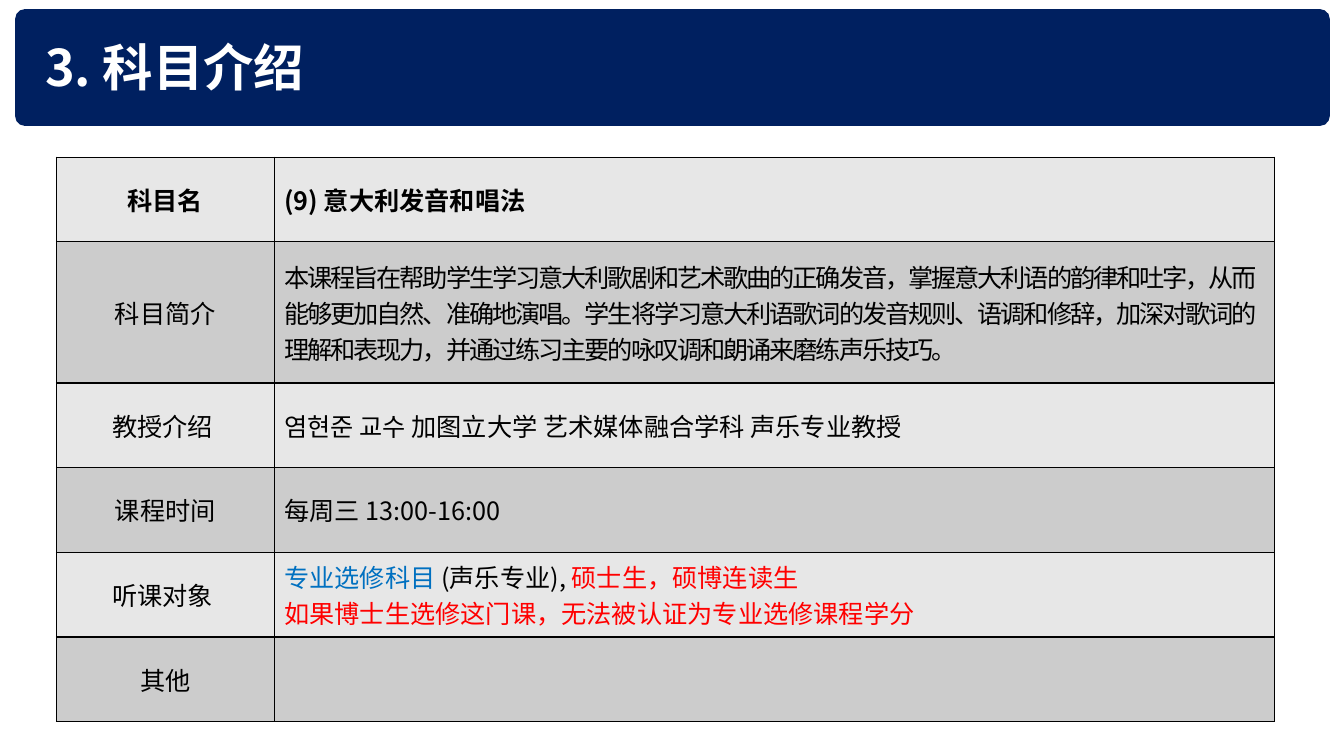
from lxml import etree
from pptx import Presentation
from pptx.dml.color import RGBColor
from pptx.enum.shapes import MSO_SHAPE
from pptx.enum.text import MSO_ANCHOR, PP_ALIGN
from pptx.oxml import parse_xml
from pptx.oxml.ns import qn
from pptx.util import Inches, Pt

ROUNDED = MSO_SHAPE.ROUNDED_RECTANGLE
MIDDLE = MSO_ANCHOR.MIDDLE
CENTER, LEFT = PP_ALIGN.CENTER, PP_ALIGN.LEFT

NAVY = RGBColor(0x00, 0x20, 0x60)
WHITE = RGBColor(0xFF, 0xFF, 0xFF)
BLACK = RGBColor(0x00, 0x00, 0x00)
BLUE = RGBColor(0x00, 0x70, 0xC0)
RED = RGBColor(0xFF, 0x00, 0x00)
BANDS = [RGBColor(0xE7, 0xE7, 0xE7), RGBColor(0xCC, 0xCC, 0xCC)]

FONT = "Noto Sans CJK KR"
BORDER = (
    '<a:{side} xmlns:a="http://schemas.openxmlformats.org/drawingml/2006/main" w="12700">'
    '<a:solidFill><a:srgbClr val="000000"/></a:solidFill></a:{side}>'
)


def write_paragraph(paragraph, runs, size, bold, color, align=LEFT, spacing=0):
    paragraph.alignment = align
    font = paragraph.font
    font.name, font.size, font.bold = FONT, Pt(size), bold
    font.color.rgb = color
    properties = font._element
    properties.set("spc", str(spacing))
    etree.SubElement(properties, qn("a:ea")).set("typeface", FONT)
    for text, run_color in runs:
        run = paragraph.add_run()
        run.text = text
        if run_color != color:
            run.font.color.rgb = run_color
        etree.SubElement(run._r.get_or_add_rPr(), qn("a:ea")).set("typeface", FONT)


prs = Presentation()
prs.slide_width, prs.slide_height = Inches(13.33), Inches(7.5)
slide = prs.slides.add_slide(prs.slide_layouts[6])

banner = slide.shapes.add_shape(ROUNDED, Inches(0.15), Inches(0.09), Inches(13.04), Inches(1.16))
banner.adjustments[0] = 0.085
banner.shadow.inherit = False
banner.fill.solid()
banner.fill.fore_color.rgb = NAVY
banner.line.fill.background()

title = slide.shapes.add_textbox(Inches(0.35), Inches(0.31), Inches(11.73), Inches(0.71))
title.text_frame.word_wrap = True
write_paragraph(title.text_frame.paragraphs[0], [("3. 科目介绍", WHITE)], 36, True, WHITE)

course_rows = [
    ("科目名", [[("(9) 意大利发音和唱法", BLACK)]]),
    ("科目简介", [[(
        "本课程旨在帮助学生学习意大利歌剧和艺术歌曲的正确发音，掌握意大利语的韵律和吐字，"
        "从而能够更加自然、准确地演唱。学生将学习意大利语歌词的发音规则、语调和修辞，"
        "加深对歌词的理解和表现力，并通过练习主要的咏叹调和朗诵来磨练声乐技巧。", BLACK)]]),
    ("教授介绍 ", [[("염현준 교수 加图立大学 艺术媒体融合学科 声乐专业教授", BLACK)]]),
    ("课程时间", [[("每周三 13:00-16:00", BLACK)]]),
    ("听课对象 ", [
        [("专业选修科目 ", BLUE), ("(声乐专业), ", BLACK), ("硕士生，硕博连读生", RED)],
        [("如果博士生选修这门课，无法被认证为专业选修课程学分", RED)],
    ]),
    ("其他", [[]]),
]
DESCRIPTION_ROW = 1

course_table = slide.shapes.add_table(
    len(course_rows), 2, Inches(0.56), Inches(1.56), Inches(12.08), Inches(5.6)
).table
course_table.first_row = False
course_table.horz_banding = False
course_table.columns[0].width = Inches(2.16)
course_table.columns[1].width = Inches(9.92)

for row, (label, details) in enumerate(course_rows):
    course_table.rows[row].height = Inches(1.4 if row == DESCRIPTION_ROW else 0.84)
    for column, paragraphs in enumerate([[[(label, BLACK)]], details]):
        cell = course_table.cell(row, column)
        cell.vertical_anchor = MIDDLE
        for side in ("lnL", "lnR", "lnT", "lnB"):
            cell._tc.get_or_add_tcPr().append(parse_xml(BORDER.format(side=side)))
        cell.fill.solid()
        cell.fill.fore_color.rgb = BANDS[row % 2]
        spacing = -150 if row == DESCRIPTION_ROW and column == 1 else 0
        for index, runs in enumerate(paragraphs):
            frame = cell.text_frame
            paragraph = frame.add_paragraph() if index else frame.paragraphs[0]
            color = runs[0][1] if len(runs) == 1 else BLACK
            write_paragraph(paragraph, runs, 18, row == 0, color,
                            LEFT if column else CENTER, spacing)

prs.save("out.pptx")
